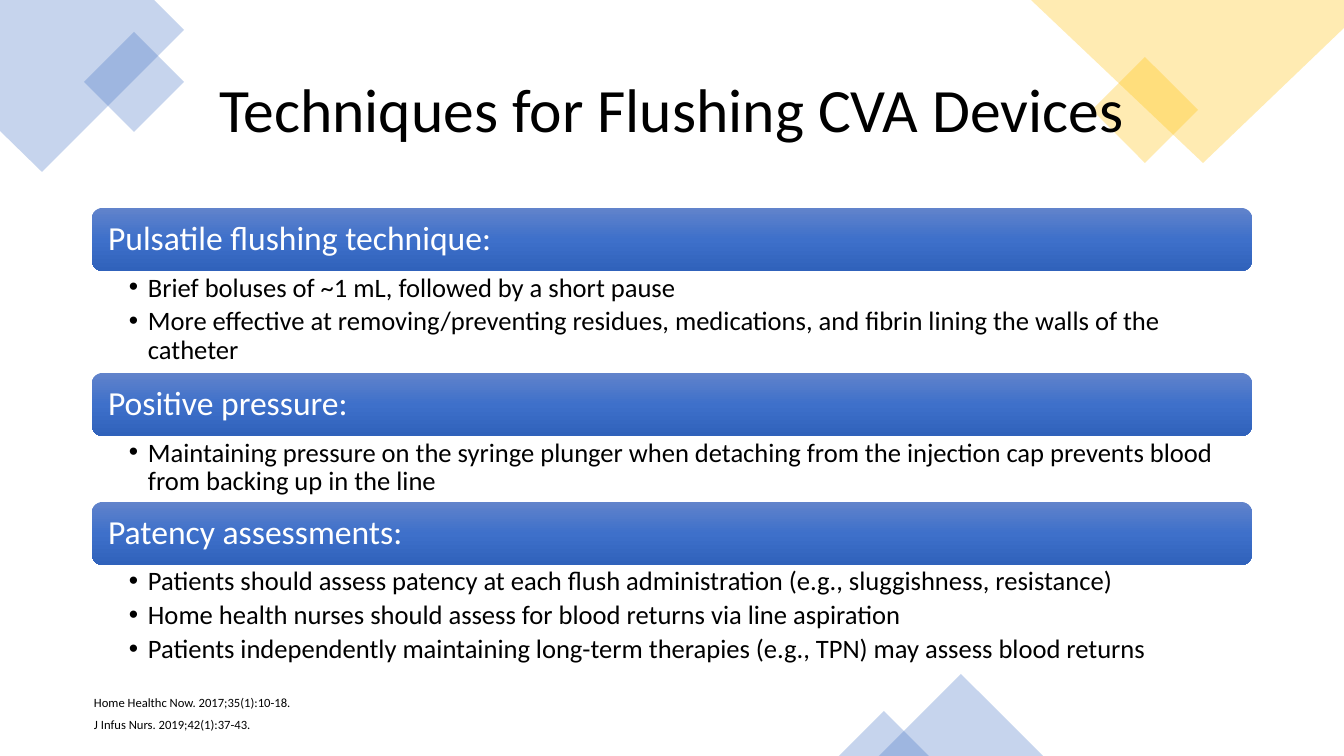
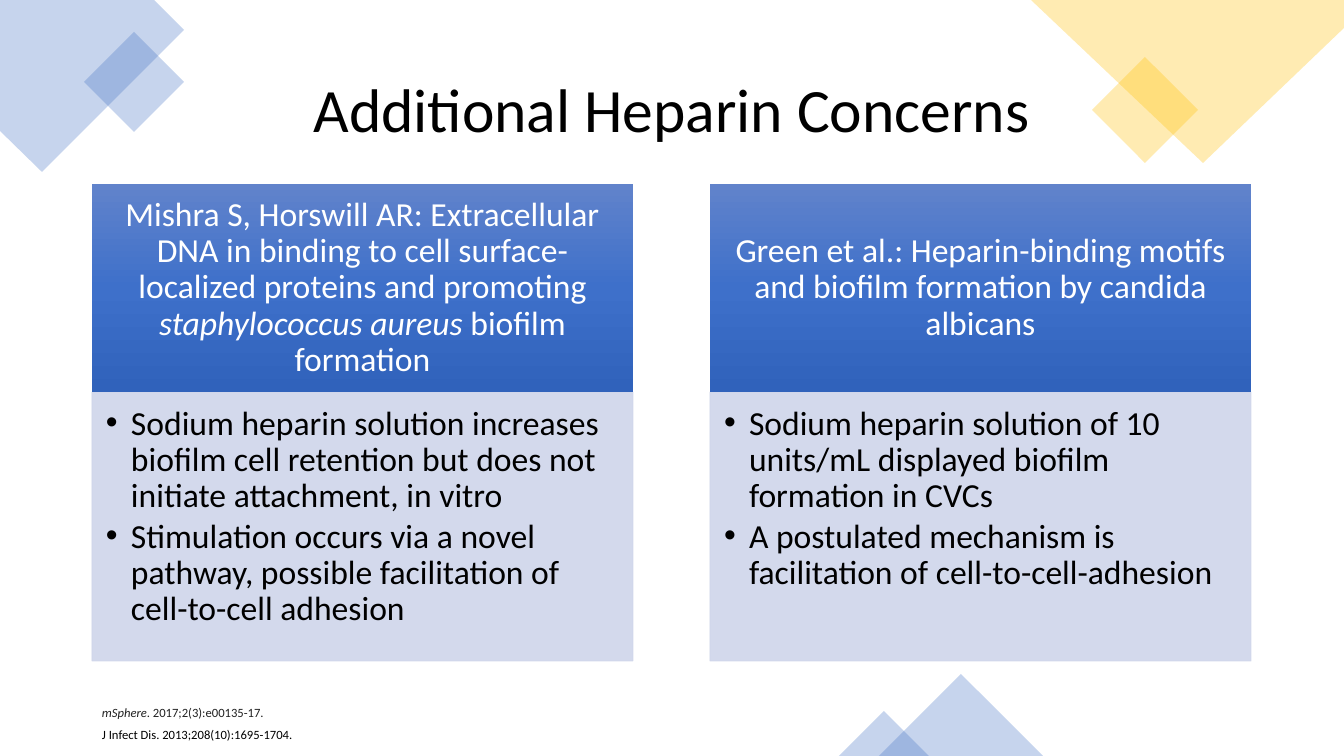
from copy import deepcopy
from dataclasses import dataclass

from lxml.etree import SubElement
from pptx import Presentation
from pptx.dml.color import RGBColor as Color
from pptx.enum.shapes import MSO_SHAPE as Preset
from pptx.enum.text import MSO_ANCHOR as Anchor, MSO_AUTO_SIZE as AutoSize, PP_ALIGN as Align
from pptx.oxml.ns import qn
from pptx.util import Emu, Pt

SLIDE_WIDTH, SLIDE_HEIGHT = 1344, 756
SCALE = 12192000 / SLIDE_WIDTH


@dataclass(frozen=True)
class Theme:
    font: str = "Calibri"
    blue: str = "4472C4"
    gold: str = "FFC000"
    panel: str = "CFD5EA"
    black: str = "000000"
    charcoal: str = "212121"
    white: str = "FFFFFF"
    gradient: tuple = ((0, "6183CB"), (0.5, "3E70CA"), (1, "3062BB"))
    decor_alpha: int = 30
    panel_alpha: int = 90
    title_size: int = 44
    heading_size: int = 24
    list_size: int = 19
    column_list_size: int = 24
    reference_size: int = 9


THEME = Theme()
TITLE_BOX = (92, 40, 1160, 146)
BARS_BOX = (92, 208, 1160, 467)
COLUMNS_BOX = (92, 184, 1160, 477)


def px(length):
    return Emu(round(length * SCALE))


def place(shape, box):
    shape.left, shape.top, shape.width, shape.height = map(px, box)


def paint(fill, color, alpha):
    fill.solid()
    fill.fore_color.rgb = Color.from_string(color)
    node = fill._xPr.find(qn("a:solidFill"))[0]
    SubElement(node, qn("a:alpha"), val=str(alpha * 1000))


def paint_gradient(shape):
    shape.fill.gradient()
    shape.fill.gradient_angle = 270
    stops = shape._element.spPr.find(qn("a:gradFill")).find(qn("a:gsLst"))
    stops.insert(1, deepcopy(stops[0]))
    for stop, (position, color) in zip(shape.fill.gradient_stops, THEME.gradient):
        stop.position = position
        stop.color.rgb = Color.from_string(color)


def set_frame(shape, insets, anchor):
    frame = shape.text_frame
    frame.word_wrap = True
    frame.auto_size = AutoSize.NONE
    frame.vertical_anchor = anchor
    frame.margin_left, frame.margin_top, frame.margin_right, frame.margin_bottom = map(px, insets)
    return frame


def write(frame, paragraphs, size, color, align=Align.LEFT, after=0, bullet=0):
    for index, spans in enumerate(paragraphs):
        para = frame.add_paragraph() if index else frame.paragraphs[0]
        para.alignment = align
        para.line_spacing = 0.9
        para.space_before = Pt(0)
        para.space_after = Pt(after)
        properties = para._p.get_or_add_pPr()
        if bullet:
            properties.set("marL", str(px(bullet)))
            properties.set("indent", str(-px(bullet)))
            SubElement(properties, qn("a:buFont"), typeface="Arial")
            SubElement(properties, qn("a:buChar"), char="•")
        for text, *style in [(spans,)] if isinstance(spans, str) else spans:
            span = para.add_run()
            span.text = text
            span.font.name = THEME.font
            span.font.size = Pt(size)
            span.font.bold = False
            span.font.italic = "italic" in style
            span.font.color.rgb = Color.from_string(THEME.charcoal if "charcoal" in style else color)


def finish_decor(shape, color):
    shape.shadow.inherit = False
    shape.line.fill.background()
    paint(shape.fill, color, THEME.decor_alpha)


def add_decor(page):
    outlines = (
        (((0, 0), (154, 0), (184, 30), (42, 172), (0, 131)), THEME.blue),
        (((1031, 0), (1344, 0), (1344, 28), (1203, 163)), THEME.gold),
    )
    for (start, *points), color in outlines:
        builder = page.shapes.build_freeform(*start, scale=SCALE)
        builder.add_line_segments(points)
        finish_decor(builder.convert_to_shape(), color)
    presets = (
        (Preset.DIAMOND, (84, 32, 100, 100), THEME.blue),
        (Preset.DIAMOND, (1092, 57, 106, 106), THEME.gold),
        (Preset.ISOSCELES_TRIANGLE, (879, 674, 164, 82), THEME.blue),
        (Preset.ISOSCELES_TRIANGLE, (839, 711, 90, 45), THEME.blue),
    )
    for preset, box, color in presets:
        finish_decor(page.shapes.add_shape(preset, *map(px, box)), color)


def add_page(deck, layout, title, references, reference_box):
    page = deck.slides.add_slide(deck.slide_layouts.get_by_name(layout))
    bodies = [holder for holder in page.placeholders if holder.placeholder_format.idx]
    add_decor(page)
    heading = page.shapes.title
    page.shapes._spTree.append(heading._element)
    place(heading, TITLE_BOX)
    frame = set_frame(heading, (10, 5, 10, 5), Anchor.MIDDLE)
    write(frame, [title], THEME.title_size, THEME.black, Align.CENTER)
    note = page.shapes.add_textbox(*map(px, reference_box))
    frame = set_frame(note, (10, 5, 10, 5), Anchor.MIDDLE)
    write(frame, references, THEME.reference_size, THEME.black, after=6)
    return page, bodies


def add_heading(page, preset, box, spans, insets, align):
    bar = page.shapes.add_shape(preset, *map(px, box))
    bar.shadow.inherit = False
    bar.line.fill.background()
    paint_gradient(bar)
    frame = set_frame(bar, insets, Anchor.MIDDLE)
    write(frame, [spans], THEME.heading_size, THEME.white, align)


def add_bars(page, bodies, box, sections):
    left, top, width, _ = box
    bar_height = 63
    for body, (heading, items, list_height) in zip(bodies, sections):
        add_heading(page, Preset.ROUNDED_RECTANGLE, (left, top, width, bar_height),
                    heading, (13, 10, 13, 10), Align.LEFT)
        top += bar_height
        place(body, (left, top, width, list_height))
        frame = set_frame(body, (37, 3, 19, 3), Anchor.TOP)
        write(frame, items, THEME.list_size, THEME.black, after=3.5, bullet=19)
        top += list_height
    for spare in bodies[len(sections):]:
        spare._element.getparent().remove(spare._element)


def add_columns(page, bodies, box, studies):
    left, top, width, height = box
    gap, heading_height = 77, 208
    column_width = (width - gap) // len(studies)
    for index, (body, (heading, items)) in enumerate(zip(bodies, studies)):
        column_left = left + index * (column_width + gap)
        add_heading(page, Preset.RECTANGLE, (column_left, top, column_width, heading_height),
                    heading, (19, 11, 19, 11), Align.CENTER)
        place(body, (column_left, top + heading_height, column_width, height - heading_height))
        paint(body.fill, THEME.panel, THEME.panel_alpha)
        paint(body.line.fill, THEME.panel, THEME.panel_alpha)
        body.line.width = Pt(0.5)
        frame = set_frame(body, (14, 14, 19, 21), Anchor.TOP)
        write(frame, items, THEME.column_list_size, THEME.black, after=3, bullet=25)


def add_techniques(deck):
    page, bodies = add_page(
        deck, "Comparison", "Techniques for Flushing CVA Devices",
        ["Home Healthc Now. 2017;35(1):10-18.", "J Infus Nurs. 2019;42(1):37-43."],
        (84, 694, 454, 40))
    add_bars(page, bodies, BARS_BOX, (
        ("Pulsatile flushing technique:", [
            "Brief boluses of ~1 mL, followed by a short pause",
            "More effective at removing/preventing residues, medications, and fibrin "
            "lining the walls of the catheter"], 102),
        ("Positive pressure:", [
            "Maintaining pressure on the syringe plunger when detaching from the injection "
            "cap prevents blood from backing up in the line"], 66),
        ("Patency assessments:", [
            "Patients should assess patency at each flush administration (e.g., sluggishness, resistance)",
            "Home health nurses should assess for blood returns via line aspiration",
            "Patients independently maintaining long-term therapies (e.g., TPN) may assess blood returns"], 110),
    ))


def add_concerns(deck):
    page, bodies = add_page(
        deck, "Two Content", "Additional Heparin Concerns",
        [[("mSphere", "italic", "charcoal"), (". 2017;2(3):e00135-17.", "charcoal")],
         "J Infect Dis. 2013;208(10):1695-1704."],
        (92, 694, 454, 60))
    add_columns(page, bodies, COLUMNS_BOX, (
        ([("Mishra S, Horswill AR: Extracellular DNA in binding to cell surface-localized "
           "proteins and promoting ",),
          ("staphylococcus aureus", "italic"), (" biofilm formation",)], [
            "Sodium heparin solution increases biofilm cell retention but does not initiate "
            "attachment, in vitro",
            "Stimulation occurs via a novel pathway, possible facilitation of cell-to-cell adhesion"]),
        ("Green et al.: Heparin-binding motifs and biofilm formation by candida albicans", [
            "Sodium heparin solution of 10 units/mL displayed biofilm formation in CVCs",
            "A postulated mechanism is facilitation of cell-to-cell-adhesion"]),
    ))


def main():
    deck = Presentation()
    deck.slide_width, deck.slide_height = px(SLIDE_WIDTH), px(SLIDE_HEIGHT)
    add_techniques(deck)
    add_concerns(deck)
    deck.save("out.pptx")


if __name__ == "__main__":
    main()
